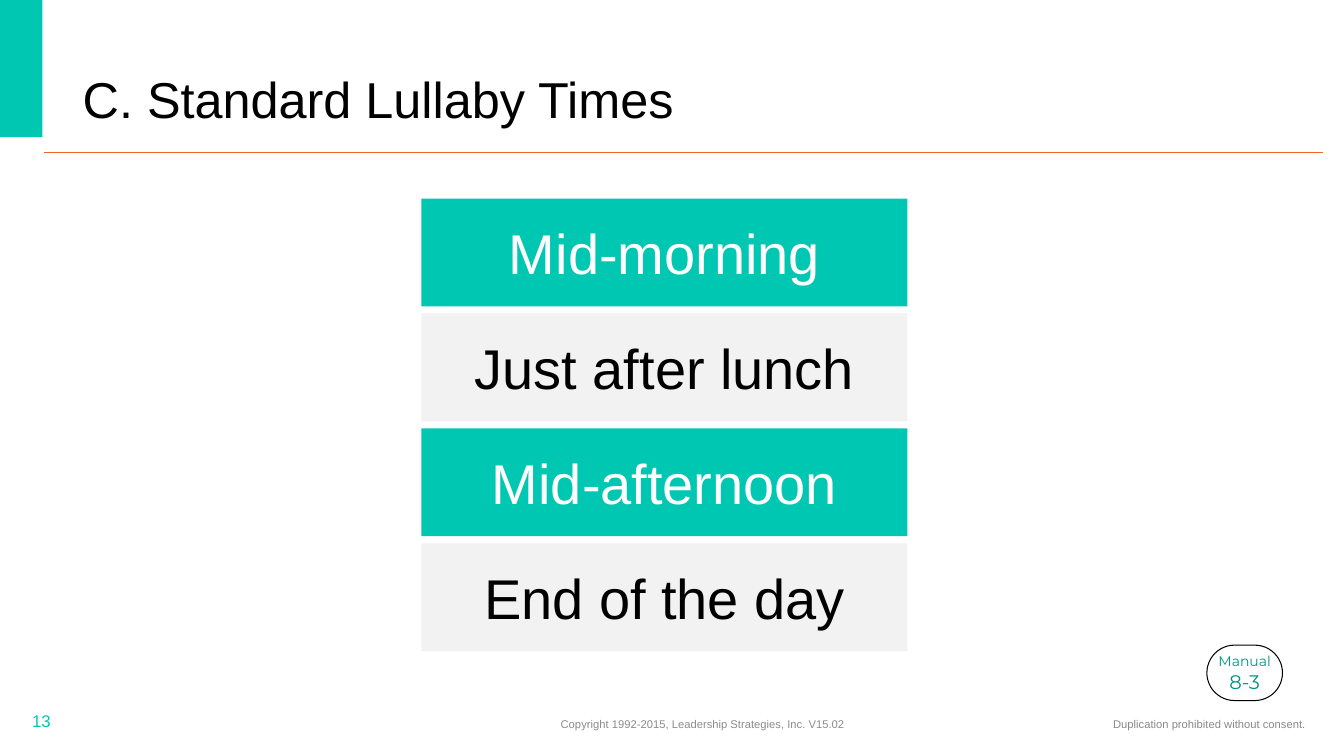
from dataclasses import dataclass

from lxml.etree import SubElement
from pptx import Presentation
from pptx.dml.color import RGBColor
from pptx.enum.shapes import MSO_CONNECTOR, MSO_SHAPE
from pptx.enum.text import MSO_ANCHOR, PP_ALIGN
from pptx.oxml.ns import qn
from pptx.util import Inches, Pt

# Content
TITLE = "C. Standard Lullaby Times"
LULLABY_TIMES = ["Mid-morning", "Just after lunch", "Mid-afternoon", "End of the day"]
MANUAL_REFERENCE = ("Manual", "8-3")
PAGE_NUMBER = "13"
COPYRIGHT = "Copyright 1992-2015, Leadership Strategies, Inc. V15.02"
NOTICE = "Duplication prohibited without consent."


@dataclass(frozen=True)
class Theme:
    font: str = "Arial"
    badge_font: str = "Montserrat"
    teal: str = "00C7B1"
    dark_teal: str = "009383"
    orange: str = "F26522"
    pale: str = "F2F2F2"
    grey: str = "898989"
    copyright_grey: str = "8C8C8C"
    black: str = "000000"
    white: str = "FFFFFF"
    title_size: int = 36
    row_size: int = 40
    number_size: int = 12
    footer_size: int = 8
    badge_sizes: tuple = (10, 14)


THEME = Theme()

# Layout in inches: left, top, width, height
WIDTH, HEIGHT = 13.33, 7.5
CORNER = (-0.02, -0.02, 0.44, 1.38)
RULE_LEFT, RULE_RIGHT, RULE_TOP = 0.44, 13.12, 1.51
TITLE_BOX = (0.72, 0.57, 8.12, 0.76)
ROW_LEFT, ROW_TOP, ROW_WIDTH, ROW_HEIGHT, ROW_GAP = 4.18, 1.97, 4.82, 1.07, 0.07
BADGE = (11.97, 6.4, 0.75, 0.55)
NUMBER_BOX = (0.22, 6.95, 3, 0.4)
COPYRIGHT_BOX = (3.59, 6.98, 6.76, 0.4)
NOTICE_BOX = (7.42, 6.98, 5.63, 0.4)


def colour(value):
    return RGBColor.from_string(value)


def box(bounds):
    return [Inches(length) for length in bounds]


def write(shape, *lines, sizes, color, font=THEME.font, align=PP_ALIGN.LEFT,
          anchor=MSO_ANCHOR.MIDDLE, wrap=True, spacing=None):
    """Fill a shape with one paragraph for each line and size."""
    frame = shape.text_frame
    frame.word_wrap = wrap
    frame.vertical_anchor = anchor
    frame.text = "\n".join(lines)
    for paragraph, size in zip(frame.paragraphs, sizes):
        paragraph.alignment = align
        paragraph.line_spacing = spacing
        for run in paragraph.runs:
            run.font.name = font
            run.font.size = Pt(size)
            run.font.color.rgb = colour(color)


def add_block(slide, bounds, fill, kind=MSO_SHAPE.RECTANGLE):
    shape = slide.shapes.add_shape(kind, *box(bounds))
    shape.shadow.inherit = False
    shape.fill.solid()
    shape.fill.fore_color.rgb = colour(fill)
    shape.line.fill.background()
    return shape


def add_frame(slide):
    """Corner block, rule and title."""
    add_block(slide, CORNER, THEME.teal)
    rule = slide.shapes.add_connector(
        MSO_CONNECTOR.STRAIGHT, Inches(RULE_LEFT), Inches(RULE_TOP),
        Inches(RULE_RIGHT), Inches(RULE_TOP))
    rule.line.color.rgb = colour(THEME.orange)
    rule.line.width = Pt(0.5)
    SubElement(rule._element.spPr, qn("a:effectLst"))

    title = slide.shapes.title
    title.left, title.top, title.width, title.height = box(TITLE_BOX)
    write(title, TITLE, sizes=[THEME.title_size], color=THEME.black,
          anchor=MSO_ANCHOR.BOTTOM, spacing=0.9)


def add_times(slide):
    """Stack of rows in alternating colours."""
    styles = [(THEME.teal, THEME.white), (THEME.pale, THEME.black)]
    for index, time in enumerate(LULLABY_TIMES):
        fill, color = styles[index % 2]
        top = ROW_TOP + index * (ROW_HEIGHT + ROW_GAP)
        row = add_block(slide, (ROW_LEFT, top, ROW_WIDTH, ROW_HEIGHT), fill)
        write(row, time, sizes=[THEME.row_size], color=color, align=PP_ALIGN.CENTER)


def add_badge(slide):
    badge = add_block(slide, BADGE, THEME.white, MSO_SHAPE.ROUNDED_RECTANGLE)
    badge.adjustments[0] = 0.5
    badge.line.color.rgb = colour(THEME.black)
    badge.line.width = Pt(0.75)
    write(badge, *MANUAL_REFERENCE, sizes=THEME.badge_sizes, color=THEME.dark_teal,
          font=THEME.badge_font, align=PP_ALIGN.CENTER, wrap=False)


def add_footer(slide):
    footers = [
        (NUMBER_BOX, PAGE_NUMBER, THEME.number_size, THEME.teal, PP_ALIGN.LEFT),
        (COPYRIGHT_BOX, COPYRIGHT, THEME.footer_size, THEME.copyright_grey, PP_ALIGN.CENTER),
        (NOTICE_BOX, NOTICE, THEME.footer_size, THEME.grey, PP_ALIGN.RIGHT),
    ]
    for bounds, text, size, color, align in footers:
        write(slide.shapes.add_textbox(*box(bounds)), text,
              sizes=[size], color=color, align=align)


def main():
    presentation = Presentation()
    presentation.slide_width, presentation.slide_height = Inches(WIDTH), Inches(HEIGHT)
    slide = presentation.slides.add_slide(presentation.slide_layouts.get_by_name("Title Only"))
    add_frame(slide)
    add_times(slide)
    add_badge(slide)
    add_footer(slide)
    presentation.save("out.pptx")


if __name__ == "__main__":
    main()
